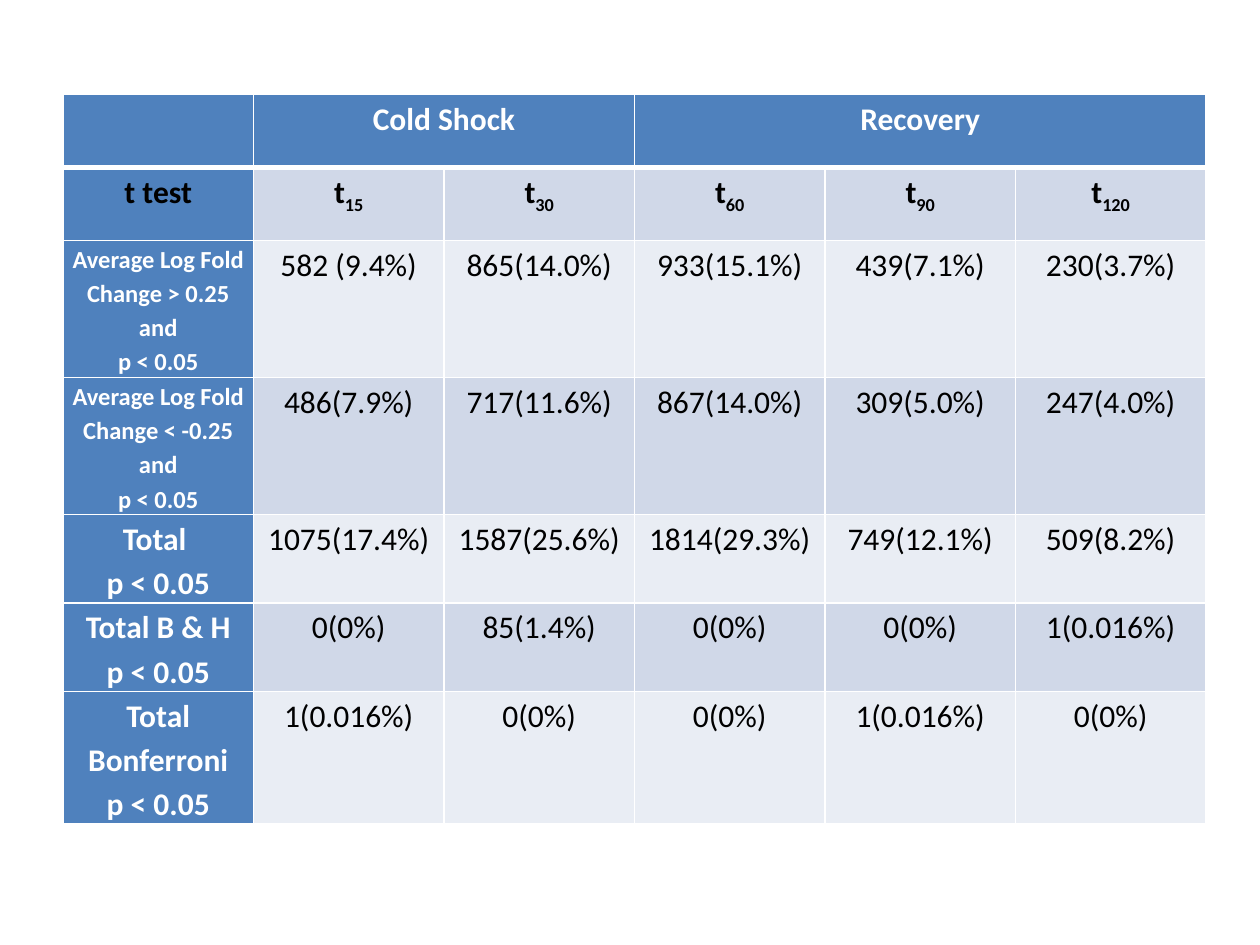
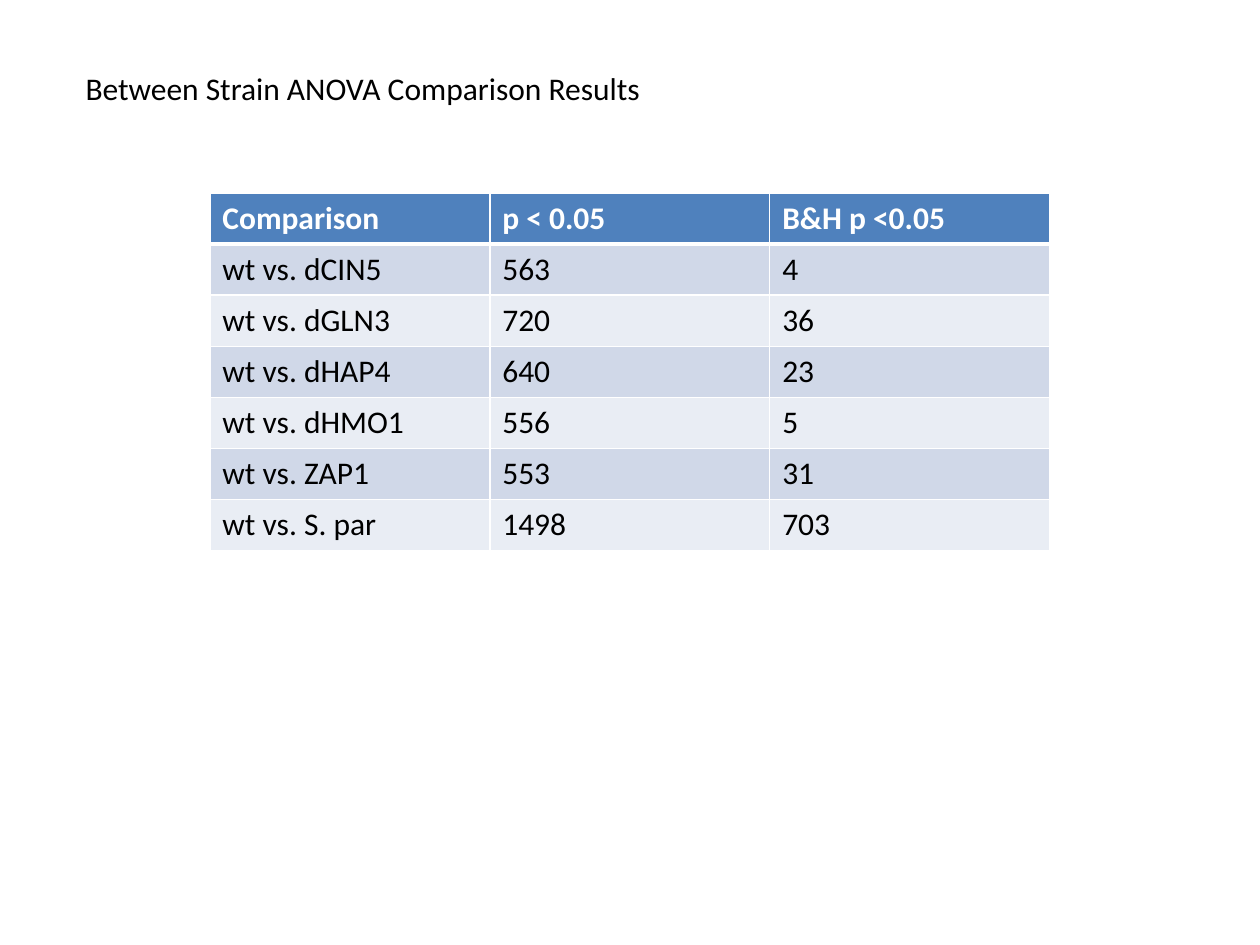
import pptx
import pptx.util
import pptx.dml.color
import pptx.enum.text
import pptx.oxml
import pptx.oxml.ns

Cm, Pt = pptx.util.Cm, pptx.util.Pt
ALIGN = pptx.enum.text.PP_ALIGN
ANCHOR = pptx.enum.text.MSO_ANCHOR

COLORS = {
    "header": "4F81BD",
    "dark_band": "D0D8E8",
    "light_band": "E9EDF4",
    "border": "FFFFFF",
    "header_text": "FFFFFF",
    "text": "000000",
}
FONT = "Calibri"
TITLE_ONLY, BLANK = 5, 6

T_TEST_ROWS = [
    ["", "Cold Shock", "", "Recovery", "", ""],
    ["t test", "t_15", "t_30", "t_60", "t_90", "t_120"],
    ["Average Log Fold Change > 0.25 and\np < 0.05",
     "582 (9.4%)", "865(14.0%)", "933(15.1%)", "439(7.1%)", "230(3.7%)"],
    ["Average Log Fold Change < -0.25 and\np < 0.05",
     "486(7.9%)", "717(11.6%)", "867(14.0%)", "309(5.0%)", "247(4.0%)"],
    ["Total \np < 0.05",
     "1075(17.4%)", "1587(25.6%)", "1814(29.3%)", "749(12.1%)", "509(8.2%)"],
    ["Total B & H\np < 0.05",
     "0(0%)", "85(1.4%)", "0(0%)", "0(0%)", "1(0.016%)"],
    ["Total Bonferroni\np < 0.05",
     "1(0.016%)", "0(0%)", "0(0%)", "1(0.016%)", "0(0%)"],
]
ANOVA_ROWS = [
    ["Comparison", "p < 0.05", "B&H p <0.05"],
    ["wt vs. dCIN5", "563", "4"],
    ["wt vs. dGLN3", "720", "36"],
    ["wt vs. dHAP4", "640", "23"],
    ["wt vs. dHMO1", "556", "5"],
    ["wt vs. ZAP1", "553", "31"],
    ["wt vs. S. par", "1498", "703"],
]


def set_attributes(target, values):
    for name, value in values.items():
        setattr(target, name, value)


def format_font(font, color, size=18, bold=False):
    set_attributes(font, {"name": FONT, "size": Pt(size), "bold": bold})
    font.color.rgb = pptx.dml.color.RGBColor.from_string(COLORS[color])


def set_borders(cell, top=1, bottom=1):
    """Draw the four cell borders, with widths in points."""
    properties = cell._tc.get_or_add_tcPr()
    widths = {"lnL": 1, "lnR": 1, "lnT": top, "lnB": bottom}
    for position, (side, width) in enumerate(widths.items()):
        properties.insert(position, pptx.oxml.parse_xml(
            f'<a:{side} {pptx.oxml.ns.nsdecls("a")} w="{Pt(width)}"><a:solidFill>'
            f'<a:srgbClr val="{COLORS["border"]}"/></a:solidFill></a:{side}>'))


def write_cell(cell, text, paragraph_format, **font_format):
    """Write one paragraph per line; an underscore starts a subscript."""
    for number, line in enumerate(text.split("\n")):
        frame = cell.text_frame
        paragraph = frame.add_paragraph() if number else frame.paragraphs[0]
        set_attributes(paragraph, paragraph_format)
        format_font(paragraph.font, **font_format)
        for part_number, part in enumerate(line.split("_")):
            if not part:
                continue
            run = paragraph.add_run()
            run.text = part
            format_font(run.font, **font_format)
            if part_number:
                run._r.get_or_add_rPr().set("baseline", "-25000")


def add_results_table(slide, box, rows, font_of, cell_format, paragraph_format):
    """Fill the box with a table of equal columns and rows, header on top."""
    left, top, width, height = map(Cm, box)
    table = slide.shapes.add_table(
        len(rows), len(rows[0]), left, top, width, height).table
    table.horz_banding = False
    for row_number, row in enumerate(rows):
        for column_number, text in enumerate(row):
            cell = table.cell(row_number, column_number)
            set_attributes(cell, cell_format)
            font_format, fill = font_of(row_number, column_number)
            write_cell(cell, text, paragraph_format, **font_format)
            cell.fill.solid()
            cell.fill.fore_color.rgb = pptx.dml.color.RGBColor.from_string(COLORS[fill])
            set_borders(cell, top=3 if row_number == 1 else 1,
                        bottom=3 if row_number == 0 else 1)
    return table


def band(row_number):
    return "dark_band" if row_number % 2 else "light_band"


def t_test_style(row_number, column_number):
    """Font and fill of a cell in the t test table."""
    if row_number == 0:
        return {"color": "header_text", "bold": True}, "header"
    if row_number == 1:
        return ({"color": "text", "bold": True},
                band(row_number) if column_number else "header")
    if column_number == 0:
        size = 14 if row_number in (2, 3) else 18
        return {"color": "header_text", "bold": True, "size": size}, "header"
    return {"color": "text"}, band(row_number)


def anova_style(row_number, column_number):
    """Font and fill of a cell in the ANOVA table."""
    if row_number == 0:
        return {"color": "header_text", "bold": True}, "header"
    return {"color": "text"}, band(row_number)


def add_title(slide, box, text):
    title = slide.shapes.title
    set_attributes(title, dict(zip(("left", "top", "width", "height"), map(Cm, box))))
    set_attributes(title.text_frame, {
        "text": text,
        "word_wrap": True,
        "vertical_anchor": ANCHOR.TOP,
        "auto_size": pptx.enum.text.MSO_AUTO_SIZE.SHAPE_TO_FIT_TEXT,
    })
    paragraph = title.text_frame.paragraphs[0]
    paragraph.alignment = ALIGN.LEFT
    format_font(paragraph.runs[0].font, "text")


def build_t_test_slide(presentation):
    slide = presentation.slides.add_slide(presentation.slide_layouts[BLANK])
    t_test = add_results_table(
        slide, (1.27, 1.9, 23.04, 10.31), T_TEST_ROWS, t_test_style,
        {"margin_left": Cm(0.18), "margin_right": Cm(0.18),
         "margin_top": 0, "margin_bottom": 0},
        {"alignment": ALIGN.CENTER, "line_spacing": 1.15})
    # Phase headings span their time points
    for first, last in ((1, 2), (3, 5)):
        t_test.cell(0, first).merge(t_test.cell(0, last))


def build_anova_slide(presentation):
    slide = presentation.slides.add_slide(presentation.slide_layouts[TITLE_ONLY])
    add_results_table(slide, (4.23, 3.89, 16.93, 7.21), ANOVA_ROWS, anova_style,
                      {}, {"alignment": ALIGN.LEFT})
    add_title(slide, (1.47, 1.27, 21.8, 1.03), "Between Strain ANOVA Comparison Results")


def main():
    presentation = pptx.Presentation()
    set_attributes(presentation, {"slide_width": Cm(25.4), "slide_height": Cm(19.05)})
    build_t_test_slide(presentation)
    build_anova_slide(presentation)
    presentation.save("out.pptx")


if __name__ == "__main__":
    main()
